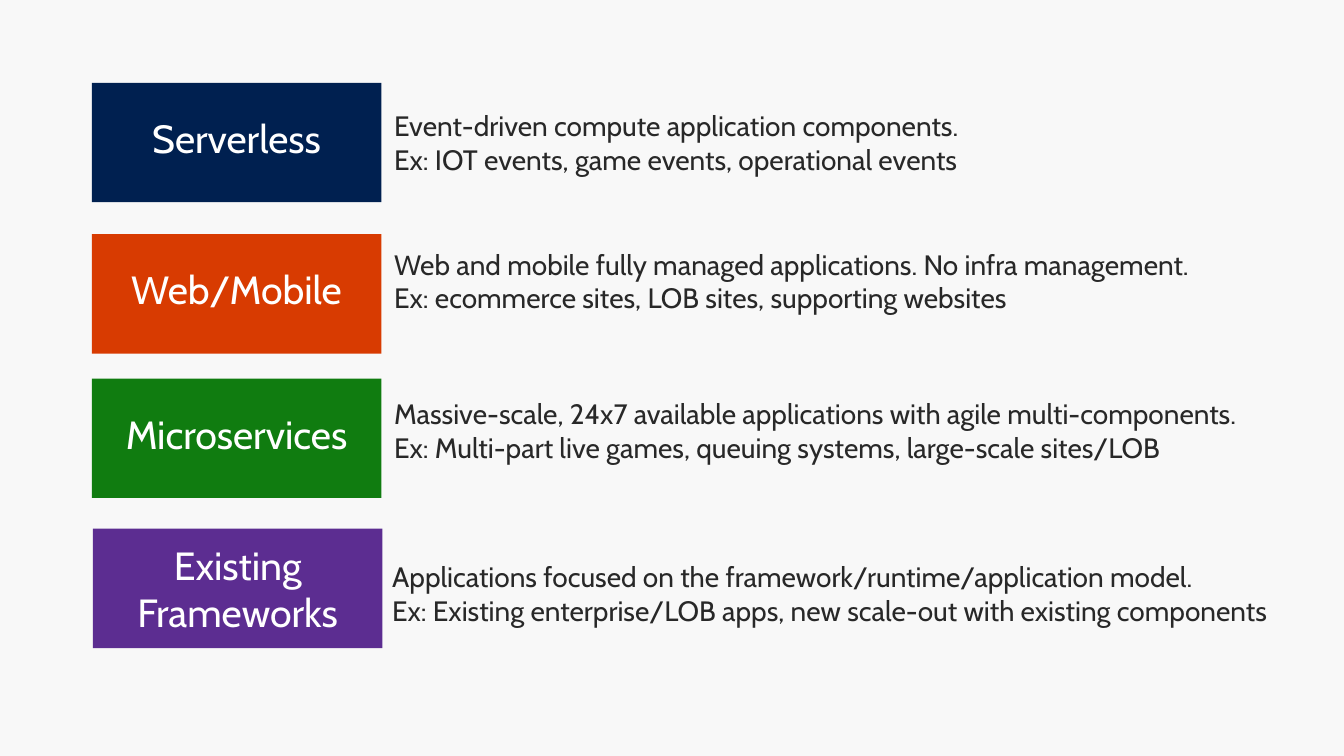
"""Build a slide pairing four application models with their descriptions."""
from dataclasses import dataclass

from pptx import Presentation
from pptx.dml.color import RGBColor
from pptx.enum.shapes import MSO_SHAPE
from pptx.enum.text import MSO_ANCHOR, PP_ALIGN
from pptx.util import Cm, Pt


@dataclass(frozen=True)
class Theme:
    """Colours, font and type sizes."""
    background: str = "F8F8F8"
    label: str = "FFFFFF"
    body: str = "282828"
    font: str = "Cabin"
    label_size: float = 28.6
    body_size: float = 20.4


@dataclass(frozen=True)
class Model:
    """One row: a coloured label and its description, in centimetres."""
    name: str
    fill: str
    lines: tuple
    label_at: tuple
    text_at: tuple
    text_width: float
    label_lift: float = 0.25


MODELS = [
    Model("Serverless", "002050",
          ("Event-driven compute application components.",
           "Ex: IOT events, game events, operational events"),
          (2.36, 2.13), (9.88, 2.67), 23.52),
    Model("Web/Mobile", "D83B01",
          ("Web and mobile fully managed applications. No infra management.",
           "Ex: ecommerce sites, LOB sites, supporting websites"),
          (2.36, 6.02), (9.88, 6.22), 23.52),
    Model("Microservices", "107C10",
          ("Massive-scale, 24x7 available applications with agile multi-components.",
           "Ex: Multi-part live games, queuing systems, large-scale sites/LOB"),
          (2.36, 9.73), (9.88, 10.06), 24.49),
    Model("Existing Frameworks", "5C2D91",
          ("Applications focused on the framework/runtime/application model.",
           "Ex: Existing enterprise/LOB apps, new scale-out with existing components"),
          (2.39, 13.59), (9.83, 14.25), 24.23, 0),
]
SLIDE_SIZE = (34.54, 19.43)
LABEL_SIZE = (7.44, 3.07)
TEXT_HEIGHT = 2.03
SIDE_INSET, END_INSET = 0.25, 0.13
THEME = Theme()


def write(frame, lines, size, color, align):
    """Fill a text frame with one paragraph per line."""
    frame.word_wrap = True
    frame.margin_left = frame.margin_right = Cm(SIDE_INSET)
    frame.margin_top = frame.margin_bottom = Cm(END_INSET)
    frame.text = "\n".join(lines)
    for para in frame.paragraphs:
        para.alignment = align
        for span in para.runs:
            span.font.name = THEME.font
            span.font.size = Pt(size)
            span.font.color.rgb = RGBColor.from_string(color)


def add_label(page, model):
    """Draw the coloured box with the model's name."""
    box = page.shapes.add_shape(
        MSO_SHAPE.RECTANGLE, *map(Cm, model.label_at + LABEL_SIZE))
    box.shadow.inherit = False
    box.fill.solid()
    box.fill.fore_color.rgb = RGBColor.from_string(model.fill)
    box.line.fill.background()
    frame = box.text_frame
    write(frame, [model.name], THEME.label_size, THEME.label, PP_ALIGN.CENTER)
    frame.vertical_anchor = MSO_ANCHOR.MIDDLE
    frame.margin_bottom = Cm(END_INSET + model.label_lift)


def add_description(page, model):
    """Place the explanation and its examples beside the label."""
    box = page.shapes.add_textbox(
        *map(Cm, model.text_at + (model.text_width, TEXT_HEIGHT)))
    write(box.text_frame, model.lines, THEME.body_size, THEME.body, PP_ALIGN.LEFT)


def main():
    """Create and save the deck."""
    deck = Presentation()
    deck.slide_width, deck.slide_height = map(Cm, SLIDE_SIZE)
    page = deck.slides.add_slide(deck.slide_layouts[6])
    page.background.fill.solid()
    page.background.fill.fore_color.rgb = RGBColor.from_string(THEME.background)
    for model in MODELS:
        add_label(page, model)
        add_description(page, model)
    deck.save("out.pptx")


if __name__ == "__main__":
    main()
